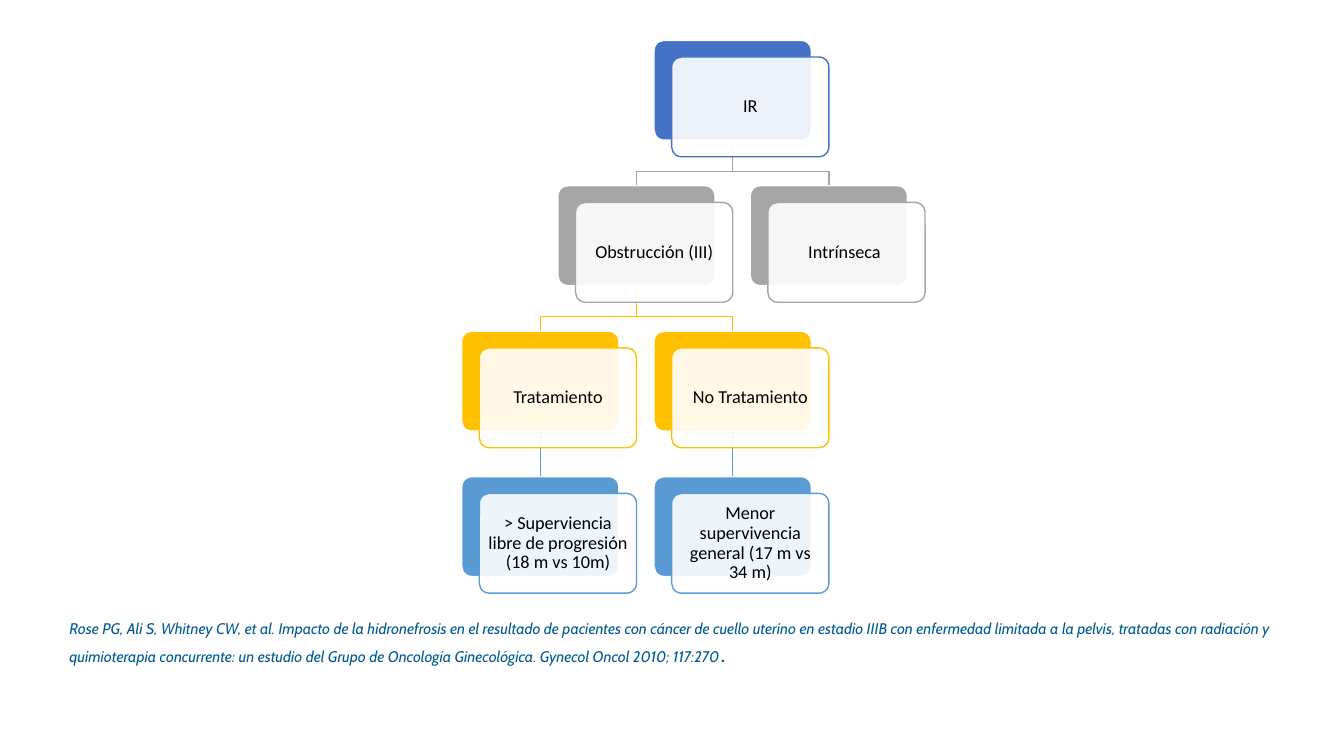
import pptx
import pptx.util
import pptx.dml.color
import pptx.enum.shapes
import pptx.enum.text
import pptx.oxml
import pptx.oxml.ns

Pt = pptx.util.Pt

COLORS = {
    "blue": "4472C4",
    "gray": "A5A5A5",
    "gold": "FFC000",
    "sky": "5B9BD5",
    "white": "FFFFFF",
    "black": "000000",
    "citation": "005B93",
}

# Tree grid: columns are half a sibling gap apart
LEFT, TOP = 329.8, 28.8
COLUMN_STEP, ROW_STEP = 68.7, 103.9
CARD_WIDTH, CARD_HEIGHT = 112.3, 71.3
OFFSET_X, OFFSET_Y = 12.6, 11.9
ELBOW_DROP = 22.3

# Node: text, column, row, color, parent
NODES = {
    "renal": ("IR", 2, 0, "blue", None),
    "obstruction": ("Obstrucción (III)", 1, 1, "gray", "renal"),
    "intrinsic": ("Intrínseca ", 3, 1, "gray", "renal"),
    "treated": ("Tratamiento", 0, 2, "gold", "obstruction"),
    "untreated": ("No Tratamiento", 2, 2, "gold", "obstruction"),
    "longer": ("> Superviencia libre de progresión (18 m vs 10m)", 0, 3, "sky", "treated"),
    "shorter": ("Menor supervivencia general (17 m vs 34 m)", 2, 3, "sky", "untreated"),
}

CITATION = (
    "Rose PG, Ali S, Whitney CW, et al. Impacto de la hidronefrosis en el resultado de "
    "pacientes con cáncer de cuello uterino en estadio IIIB con enfermedad limitada a la "
    "pelvis, tratadas con radiación y quimioterapia concurrente: un estudio del Grupo de "
    "Oncología Ginecológica. Gynecol Oncol 2010; 117:270"
)


class SlideBuilder:
    """Holds the style and the current slide."""

    node_font = {"name": "Calibri", "size": Pt(13)}
    citation_font = {"name": "Cabin", "size": Pt(11), "italic": True}
    stop_font = {"name": "Cabin", "size": Pt(18), "italic": False}
    node_frame = {
        "word_wrap": True,
        "vertical_anchor": pptx.enum.text.MSO_ANCHOR.MIDDLE,
        "margin_left": Pt(3.6),
        "margin_right": Pt(3.6),
        "margin_top": Pt(3.6),
        "margin_bottom": Pt(3.6),
    }

    def __init__(self, slide):
        self.slide = slide

    def color(self, name):
        return pptx.dml.color.RGBColor.from_string(COLORS[name])

    def apply(self, target, values):
        for name, value in values.items():
            setattr(target, name, value)

    def outline(self, shape, color):
        shape.line.color.rgb = self.color(color)
        shape.line.width = Pt(1)

    def add_run(self, paragraph, text, font, color):
        run = paragraph.add_run()
        run.text = text
        self.apply(run.font, font)
        run.font.color.rgb = self.color(color)

    def add_card(self, left, top, fill, line, opacity=100):
        shape = self.slide.shapes.add_shape(
            pptx.enum.shapes.MSO_SHAPE.ROUNDED_RECTANGLE,
            Pt(left), Pt(top), Pt(CARD_WIDTH), Pt(CARD_HEIGHT))
        shape.adjustments[0] = 0.1
        shape.shadow.inherit = False
        shape.fill.solid()
        shape.fill.fore_color.rgb = self.color(fill)
        if opacity < 100:
            color_element = shape.fill._xPr.find(".//" + pptx.oxml.ns.qn("a:srgbClr"))
            alpha = pptx.oxml.parse_xml(
                f'<a:alpha {pptx.oxml.ns.nsdecls("a")} val="{opacity * 1000}"/>')
            color_element.append(alpha)
        self.outline(shape, line)
        return shape

    def add_node(self, text, left, top, color):
        self.add_card(left, top, color, "white")
        front = self.add_card(left + OFFSET_X, top + OFFSET_Y, "white", color, 90)
        self.apply(front.text_frame, self.node_frame)
        paragraph = front.text_frame.paragraphs[0]
        paragraph.alignment = pptx.enum.text.PP_ALIGN.CENTER
        paragraph.line_spacing = 0.9
        self.add_run(paragraph, text, self.node_font, "black")

    def add_branch(self, start_x, start_y, end_x, end_y, color):
        if start_x == end_x:
            branch = self.slide.shapes.add_connector(
                pptx.enum.shapes.MSO_CONNECTOR.STRAIGHT,
                Pt(start_x), Pt(start_y), Pt(end_x), Pt(end_y))
            branch._element.spPr.append(
                pptx.oxml.parse_xml(f'<a:effectLst {pptx.oxml.ns.nsdecls("a")}/>'))
        else:
            elbow_y = start_y + ELBOW_DROP
            points = [(start_x, elbow_y), (end_x, elbow_y), (end_x, end_y)]
            builder = self.slide.shapes.build_freeform(Pt(start_x), Pt(start_y))
            builder.add_line_segments([(Pt(x), Pt(y)) for x, y in points], close=False)
            branch = builder.convert_to_shape()
            branch.fill.background()
            branch.shadow.inherit = False
        self.outline(branch, color)

    def add_citation(self, left, top, width, height):
        shape = self.slide.shapes.add_textbox(Pt(left), Pt(top), Pt(width), Pt(height))
        shape.text_frame.word_wrap = True
        shape.text_frame.auto_size = pptx.enum.text.MSO_AUTO_SIZE.SHAPE_TO_FIT_TEXT
        paragraph = shape.text_frame.paragraphs[0]
        self.add_run(paragraph, CITATION, self.citation_font, "citation")
        self.add_run(paragraph, ".", self.stop_font, "citation")


def node_position(key):
    column, row = NODES[key][1:3]
    return LEFT + column * COLUMN_STEP, TOP + row * ROW_STEP


def main():
    presentation = pptx.Presentation()
    presentation.slide_width = Pt(960)
    presentation.slide_height = Pt(540)
    builder = SlideBuilder(presentation.slides.add_slide(presentation.slide_layouts[6]))

    # Branches lie behind the cards
    for key, (text, column, row, color, parent) in NODES.items():
        if parent:
            parent_left, parent_top = node_position(parent)
            left, top = node_position(key)
            middle = CARD_WIDTH / 2
            builder.add_branch(parent_left + middle, parent_top + CARD_HEIGHT,
                               left + middle, top, color)

    # Cards
    for key, (text, column, row, color, parent) in NODES.items():
        builder.add_node(text, *node_position(key), color)

    # Source citation
    builder.add_citation(42.5, 438.5, 904.3, 42.5)

    presentation.save("out.pptx")


if __name__ == "__main__":
    main()
